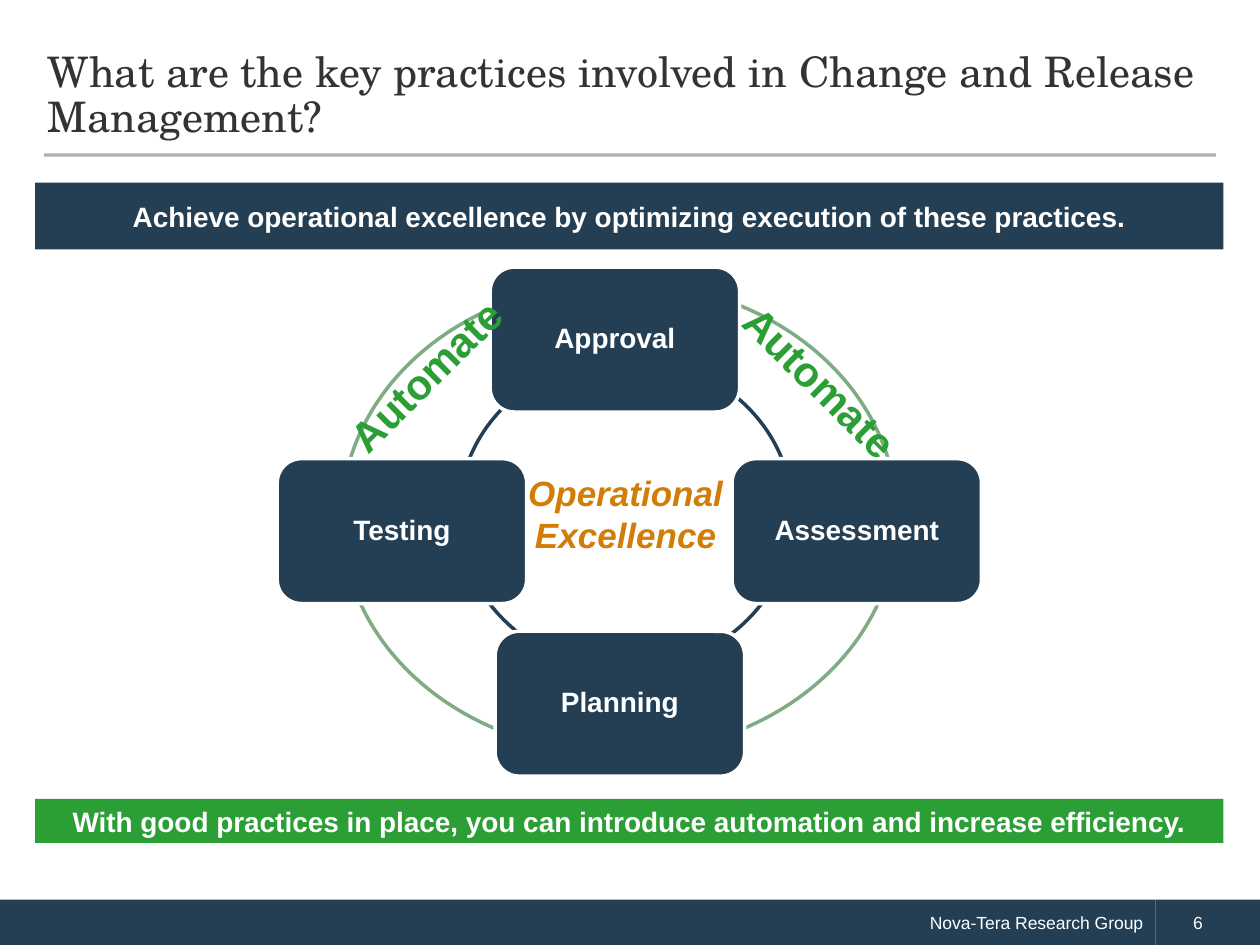
from dataclasses import dataclass

from lxml import etree
from pptx import Presentation
from pptx import util as u
from pptx.dml.color import RGBColor
from pptx.enum import shapes, text
from pptx.oxml import ns

Inches = u.Inches


@dataclass(frozen=True)
class Theme:
    navy: str = "243F54"
    green: str = "2B9E36"
    pale_green: str = "7FAC85"
    orange: str = "D17D08"
    white: str = "FFFFFF"
    title_grey: str = "333333"
    rule_grey: str = "45433E"
    title_font: str = "TeX Gyre Schola"
    body_font: str = "Arial"
    footer_size: int = 10
    label_size: int = 16
    centre_size: int = 20
    large_size: int = 24


theme = Theme()


def write(box, words, size=theme.label_size, color=theme.white, font=theme.body_font,
          bold=True, italic=False, align=text.PP_ALIGN.CENTER,
          anchor=text.MSO_ANCHOR.MIDDLE, spacing=None):
    frame = box.text_frame
    frame.word_wrap = True
    frame.auto_size = text.MSO_AUTO_SIZE.NONE
    frame.vertical_anchor = anchor
    para = frame.paragraphs[0]
    para.alignment = align
    para.line_spacing = spacing
    span = para.add_run()
    span.text = words
    span.font.name = font
    span.font.size = u.Pt(size)
    span.font.bold = bold
    span.font.italic = italic
    span.font.color.rgb = RGBColor.from_string(color)


def add_box(kind, left, top, width, height, fill=None, line=None):
    box = slide.shapes.add_shape(kind, Inches(left), Inches(top), Inches(width), Inches(height))
    box.shadow.inherit = False
    if fill:
        box.fill.solid()
        box.fill.fore_color.rgb = RGBColor.from_string(fill)
    else:
        box.fill.background()
    if line:
        box.line.color.rgb = RGBColor.from_string(line)
        box.line.width = u.Pt(2)
    else:
        box.line.fill.background()
    return box


deck = Presentation()
deck.slide_width, deck.slide_height = Inches(10), Inches(7.5)
slide = deck.slides.add_slide(deck.slide_layouts[5])
shape_kind = shapes.MSO_SHAPE

# Footer band
owner = add_box(shape_kind.RECTANGLE, 0, 7.14, 9.17, 0.37, theme.navy)
write(owner, "Nova-Tera Research Group", size=theme.footer_size, bold=False,
      align=text.PP_ALIGN.RIGHT)
page = add_box(shape_kind.RECTANGLE, 9.17, 7.14, 0.83, 0.37, theme.navy)
page.text_frame.margin_left = Inches(0.3)
write(page, "6", size=theme.footer_size, bold=False, align=text.PP_ALIGN.LEFT)

# Title and the rule under it
rule = slide.shapes.add_connector(shapes.MSO_CONNECTOR.STRAIGHT,
                                  Inches(0.35), Inches(1.23), Inches(9.65), Inches(1.23))
rule.line.color.rgb = RGBColor.from_string(theme.rule_grey)
rule.line.width = u.Pt(1.75)
rule_color = rule.line._ln.find(".//" + ns.qn("a:srgbClr"))
etree.SubElement(rule_color, ns.qn("a:alpha")).set("val", "42000")
etree.SubElement(rule._element.spPr, ns.qn("a:effectLst"))

title = slide.shapes.title
title.left, title.top = Inches(0.28), Inches(0.29)
title.width, title.height = Inches(9.43), Inches(0.94)
write(title, "What are the key practices involved in Change and Release Management?",
      size=theme.large_size, color=theme.title_grey, font=theme.title_font, bold=False,
      align=text.PP_ALIGN.LEFT, spacing=u.Pt(26))

# Practice cycle
add_box(shape_kind.OVAL, 2.71, 2.24, 4.41, 3.74, line=theme.pale_green)
centre = add_box(shape_kind.OVAL, 3.64, 2.84, 2.65, 2.47, theme.white, theme.navy)
write(centre, "Operational Excellence", size=theme.centre_size, color=theme.orange, italic=True)

practices = [
    ("Assessment", 5.81, 3.64),
    ("Testing", 2.2, 3.64),
    ("Planning", 3.93, 5.01),
    ("Approval", 3.89, 2.12),
]
for name, left, top in practices:
    practice = add_box(shape_kind.ROUNDED_RECTANGLE, left, top, 1.98, 1.15,
                       theme.navy, theme.white)
    write(practice, name, spacing=0.9)

for left, top, angle in [(2.48, 2.46, 315.2), (4.32, 2.51, 44.8)]:
    automate = slide.shapes.add_textbox(Inches(left), Inches(top), Inches(3.09), Inches(2.34))
    automate.rotation = angle
    write(automate, "Automate", size=theme.large_size, color=theme.green,
          anchor=text.MSO_ANCHOR.TOP)

# Message banners
banners = [
    ("Achieve operational excellence by optimizing execution of these practices.",
     1.45, 0.53, theme.navy),
    ("With good practices in place, you can introduce automation and increase efficiency.",
     6.34, 0.35, theme.green),
]
for message, top, height, fill in banners:
    banner = add_box(shape_kind.RECTANGLE, 0.28, top, 9.43, height, fill)
    write(banner, message)

deck.save("out.pptx")
